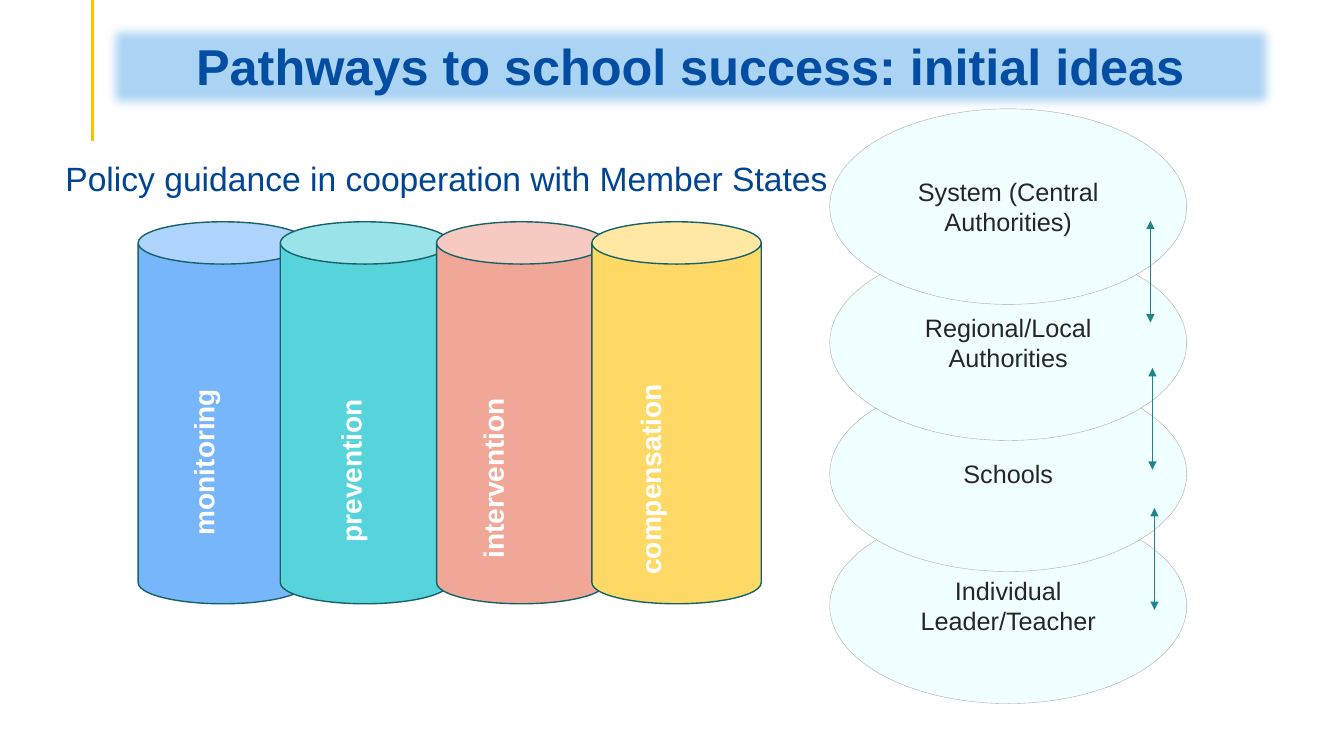
from dataclasses import dataclass
from typing import Any, NamedTuple

from lxml.etree import SubElement as AddElement
from pptx import Presentation
from pptx.dml.color import RGBColor
from pptx.enum.shapes import MSO_CONNECTOR as Connector, MSO_SHAPE as Preset
from pptx.enum.text import MSO_ANCHOR as Anchor, PP_ALIGN as Align
from pptx.oxml.ns import qn
from pptx.util import Emu, Inches, Pt


@dataclass(frozen=True)
class Theme:
    font: str = "Arial"
    title: str = "034EA2"
    subtitle: str = "004494"
    banner: str = "ABD3F3"
    accent: str = "FFC000"
    outline: str = "166267"
    arrow: str = "1E858B"
    level_fill: str = "F0FFFF"
    level_line: str = "A6A6A6"
    level_text: str = "262626"
    pillar_text: str = "FFFFFF"
    title_size: int = 36
    subtitle_size: int = 24
    pillar_size: int = 20
    level_size: int = 18


class Box(NamedTuple):
    """Left, top, width and height in grid cells."""
    left: float
    top: float
    width: float
    height: float


class Pillar(NamedTuple):
    name: str
    left: float
    fill: str
    label: Box


class Level(NamedTuple):
    name: str
    top: float


THEME = Theme()
COLUMNS, ROWS = 133.3, 75  # square cells, a tenth of an inch
PILLAR_TOP, PILLAR_WIDTH, PILLAR_HEIGHT = 22, 16.8, 37.9
LEVEL_LEFT, LEVEL_WIDTH, LEVEL_HEIGHT = 82.3, 35.4, 19.4
ARROW_LEFT, ARROW_STEP, ARROW_LENGTH = 114.1, 0.2, 10.1
ARROW_TOPS = (21.9, 36.5, 50.4)

PILLARS = (
    Pillar("monitoring", 13.7, "78B6FC", Box(18, 29.5, 7.2, 24.6)),
    Pillar("prevention", 27.8, "57D3DB", Box(32.6, 30.2, 7.2, 24.6)),
    Pillar("intervention", 43.3, "F1A798", Box(46.7, 28.5, 7.2, 27.9)),
    Pillar("compensation", 58.7, "FFD966", Box(62.3, 26.9, 7.2, 31.1)),
)
LEVELS = (
    Level("System (Central Authorities)", 10.8),
    Level("Regional/Local Authorities", 24.3),
    Level("Schools", 37.3),
    Level("Individual Leader/Teacher", 50.4),
)

presentation = Presentation()
presentation.slide_width = Inches(13.33)
presentation.slide_height = Inches(7.5)
slide = presentation.slides.add_slide(presentation.slide_layouts[6])


def cells(*values: float) -> list[Emu]:
    """Turn grid cells into slide lengths."""
    cell = presentation.slide_height / ROWS
    return [Emu(round(value * cell)) for value in values]


def set_formats(target: Any, formats: dict[str, Any]) -> None:
    for name, value in formats.items():
        setattr(target, name, value)


def write(shape: Any, text: str, size: int, color: str, bold: bool = False,
          align: Align = Align.LEFT, anchor: Anchor = Anchor.TOP) -> Any:
    set_formats(shape.text_frame, {"word_wrap": True, "vertical_anchor": anchor})
    paragraph = shape.text_frame.paragraphs[0]
    paragraph.alignment = align
    run = paragraph.add_run()
    run.text = text
    set_formats(run.font, {"name": THEME.font, "size": Pt(size), "bold": bold})
    run.font.color.rgb = RGBColor.from_string(color)
    return paragraph


def add_figure(preset: Preset, box: Box, fill: str, line: str | None = None,
               width: float = 1) -> Any:
    shape = slide.shapes.add_shape(preset, *cells(*box))
    shape.shadow.inherit = False
    shape.fill.solid()
    shape.fill.fore_color.rgb = RGBColor.from_string(fill)
    if line:
        shape.line.color.rgb = RGBColor.from_string(line)
        shape.line.width = Pt(width)
    else:
        shape.line.fill.background()
    return shape


def add_line(left: float, top: float, length: float, color: str, width: float,
             arrows: bool = False) -> None:
    connector = slide.shapes.add_connector(
        Connector.STRAIGHT, *cells(left, top, left, top + length))
    connector.line.color.rgb = RGBColor.from_string(color)
    connector.line.width = Pt(width)
    properties = connector._element.spPr
    if arrows:
        for end in ("a:headEnd", "a:tailEnd"):
            AddElement(properties.find(qn("a:ln")), qn(end), type="triangle")
    AddElement(properties, qn("a:effectLst"))


def add_label(box: Box, text: str, size: int, color: str, bold: bool = False,
              upward: bool = False) -> None:
    label = slide.shapes.add_textbox(*cells(*box))
    write(label, text, size, color, bold)
    if upward:
        label.text_frame._txBody.bodyPr.set("vert", "vert270")


def add_pillar(pillar: Pillar) -> None:
    box = Box(pillar.left, PILLAR_TOP, PILLAR_WIDTH, PILLAR_HEIGHT)
    add_figure(Preset.CAN, box, pillar.fill, THEME.outline)
    add_label(pillar.label, pillar.name, THEME.pillar_size, THEME.pillar_text,
              bold=True, upward=True)


def add_level(level: Level) -> None:
    box = Box(LEVEL_LEFT, level.top, LEVEL_WIDTH, LEVEL_HEIGHT)
    ellipse = add_figure(Preset.OVAL, box, THEME.level_fill, THEME.level_line, 0.25)
    write(ellipse, level.name, THEME.level_size, THEME.level_text,
          align=Align.CENTER, anchor=Anchor.MIDDLE)


def add_title(text: str) -> None:
    banner = add_figure(Preset.RECTANGLE, Box(10.1, 1.8, 116.8, 9.6), THEME.banner)
    effects = banner._element.spPr.find(qn("a:effectLst"))
    AddElement(effects, qn("a:softEdge"), rad=str(Inches(0.12)))
    banner.text_frame.margin_bottom = 0
    paragraph = write(banner, text, THEME.title_size, THEME.title, True,
                      Align.CENTER, Anchor.MIDDLE)
    paragraph.line_spacing = 0.9


# Accent line, title and subtitle
add_line(9.2, 0, 14, THEME.accent, 2.25)
add_title("Pathways to school success: initial ideas")
add_label(Box(5.5, 15.2, 78.2, 5), "Policy guidance in cooperation with Member States",
          THEME.subtitle_size, THEME.subtitle)

# Policy pillars, each overlapping the one before
for pillar in PILLARS:
    add_pillar(pillar)

# Levels of authority, the highest in front
for level in reversed(LEVELS):
    add_level(level)

# Two-way arrows between levels
for index, top in enumerate(ARROW_TOPS):
    add_line(ARROW_LEFT + index * ARROW_STEP, top, ARROW_LENGTH, THEME.arrow, 0.5,
             arrows=True)

presentation.save("out.pptx")
